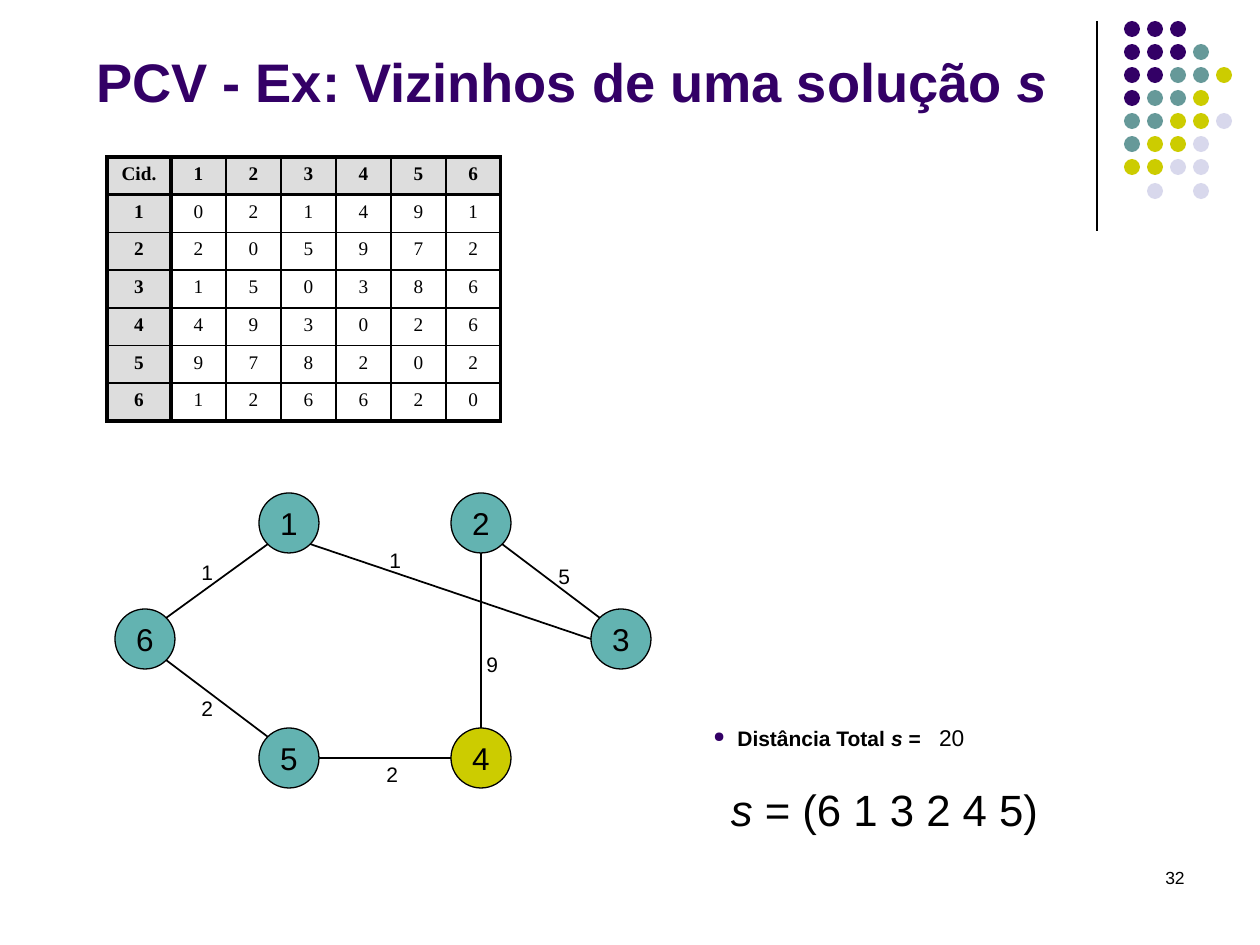
from lxml import etree
from pptx import Presentation
from pptx import util as u
from pptx.dml.color import RGBColor
from pptx.enum import shapes, text
from pptx.oxml import ns

BLACK, PLUM, TEAL, LIME = "000000", "330066", "63B3B1", "CCCC00"
ALIGN = {"l": text.PP_ALIGN.LEFT, "c": text.PP_ALIGN.CENTER, "r": text.PP_ALIGN.RIGHT}
HUES = {"p": PLUM, "t": "669999", "y": LIME, "g": "D8D8EC"}
DOTS = ["ppp", "pppt", "pptty", "ptty", "ttyyg", "tyyg", "yygg", " g g"]
COSTS = [[0, 2, 1, 4, 9, 1], [2, 0, 5, 9, 7, 2], [1, 5, 0, 3, 8, 6],
         [4, 9, 3, 0, 2, 6], [9, 7, 8, 2, 0, 2], [1, 2, 6, 6, 2, 0]]
NODES = {1: (289, 523), 2: (481, 523), 3: (621, 639),
         4: (481, 758), 5: (289, 758), 6: (145, 639)}
RADIUS, DIAG = 30, 21
EDGES = [(5, (-DIAG, -DIAG), 6, (DIAG, DIAG)),
         (6, (DIAG, -DIAG), 1, (-DIAG, DIAG)),
         (1, (DIAG, DIAG), 3, (-RADIUS, 0)),
         (3, (-DIAG, -DIAG), 2, (DIAG, DIAG)),
         (2, (0, RADIUS), 4, (0, -RADIUS)),
         (4, (-RADIUS, 0), 5, (RADIUS, 0))]
LABELS = [("2", 189, 689), ("1", 189, 553), ("5", 546, 557),
          ("1", 377, 541), ("9", 474, 645), ("2", 374, 755)]


def px(n):
    """Turn pixels into EMU."""
    return u.Emu(round(n * 914400 / 126))


def rgb(code):
    """Turn a hex string into a colour."""
    return RGBColor.from_string(code)


def write(para, runs, size, color=BLACK, font="Arial", bold=False, align="l"):
    """Add (words, italic) runs to a paragraph."""
    para.alignment = ALIGN[align]
    for words, slant in runs:
        run = para.add_run()
        run.text = words
        face = run.font
        face.name, face.size, face.bold, face.italic = font, u.Pt(size), bold, slant
        face.color.rgb = rgb(color)


def note(slide, box, runs, size, wrap=True, low=False, **style):
    """Add a text box and return its paragraph."""
    frame = slide.shapes.add_textbox(*map(px, box)).text_frame
    frame.word_wrap = wrap
    frame.vertical_anchor = text.MSO_ANCHOR.BOTTOM if low else text.MSO_ANCHOR.TOP
    write(frame.paragraphs[0], runs, size, **style)
    return frame.paragraphs[0]


def bullet(para, color, indent):
    """Give a paragraph a round bullet with a hanging indent."""
    props = para._p.get_or_add_pPr()
    props.set("marL", str(px(indent)))
    props.set("indent", str(-px(indent)))
    hue = etree.SubElement(props, ns.qn("a:buClr"))
    etree.SubElement(hue, ns.qn("a:srgbClr"), val=color)
    etree.SubElement(props, ns.qn("a:buSzPct"), val="70000")
    etree.SubElement(props, ns.qn("a:buChar"), char="●")


def disc(slide, x, y, size, fill):
    """Add a plain filled circle."""
    shape = slide.shapes.add_shape(shapes.MSO_SHAPE.OVAL, px(x), px(y), px(size), px(size))
    shape.shadow.inherit = False
    shape.fill.solid()
    shape.fill.fore_color.rgb = rgb(fill)
    shape.line.fill.background()
    return shape


def node(slide, name, x, y, fill):
    """Add a numbered city centred on a point."""
    shape = disc(slide, x - RADIUS, y - RADIUS, 2 * RADIUS, fill)
    shape.line.color.rgb = rgb(BLACK)
    shape.line.width = u.Pt(0.75)
    frame = shape.text_frame
    frame.word_wrap = False
    frame.vertical_anchor = text.MSO_ANCHOR.MIDDLE
    write(frame.paragraphs[0], [(str(name), False)], 18, align="c")


def link(slide, start, end, width=1):
    """Add a straight black line."""
    line = slide.shapes.add_connector(shapes.MSO_CONNECTOR.STRAIGHT, *map(px, start + end))
    line.line.color.rgb = rgb(BLACK)
    line.line.width = u.Pt(width)
    etree.SubElement(line._element.spPr, ns.qn("a:effectLst"))


def border(cell, sides):
    """Draw the four cell borders, given as side to width."""
    props = cell._tc.get_or_add_tcPr()
    for side, width in sides.items():
        line = etree.SubElement(props, ns.qn(f"a:ln{side}"), w=str(u.Pt(width)))
        fill = etree.SubElement(line, ns.qn("a:solidFill"))
        etree.SubElement(fill, ns.qn("a:srgbClr"), val=BLACK)


def grid(slide, x, y, rows):
    """Add the distance table with grey heads and a thick frame."""
    count = len(rows)
    widths, height = [64] + [55] * (count - 1), 264 / count
    table = slide.shapes.add_table(count, count, px(x), px(y), px(sum(widths)),
                                   px(height * count)).table
    table.first_row = table.horz_banding = False
    for col, width in zip(table.columns, widths):
        col.width = px(width)
    thick = {0, 1, count}
    for i, row in enumerate(rows):
        table.rows[i].height = px(height)
        for j, value in enumerate(row):
            cell = table.cell(i, j)
            edges = {"L": j, "R": j + 1, "T": i, "B": i + 1}
            border(cell, {k: 2.25 if n in thick else 1 for k, n in edges.items()})
            head = i == 0 or j == 0
            if head:
                cell.fill.solid()
                cell.fill.fore_color.rgb = rgb("DDDDDD")
            else:
                cell.fill.background()
            write(cell.text_frame.paragraphs[0], [(str(value), False)], 11,
                  font="Times New Roman", bold=head, align="c")


def decor(slide):
    """Add the corner rule and its dots."""
    link(slide, (1097, 21), (1097, 231), 0.75)
    for i, row in enumerate(DOTS):
        for j, key in enumerate(row):
            if key in HUES:
                disc(slide, 1124 + 23 * j, 21 + 162 * i // 7, 16, HUES[key])


def graph(slide):
    """Add the tour with its cities, edges and costs."""
    for name, (x, y) in NODES.items():
        node(slide, name, x, y, LIME if name == 4 else TEAL)
    for a, (ax, ay), b, (bx, by) in EDGES:
        link(slide, (NODES[a][0] + ax, NODES[a][1] + ay),
             (NODES[b][0] + bx, NODES[b][1] + by))
    for cost, x, y in LABELS:
        note(slide, (x, y, 36, 38), [(cost, False)], 12, wrap=False, align="c")


def main():
    """Build the slide and save it."""
    deck = Presentation()
    deck.slide_width, deck.slide_height = px(1260), px(945)
    slide = deck.slides.add_slide(deck.slide_layouts[6])
    decor(slide)
    note(slide, (903, 861, 294, 63), [("32", False)], 10, align="r")
    note(slide, (84, 32, 1008, 88),
         [("PCV - Ex: Vizinhos de uma solução ", False), ("s", True)], 31,
         low=True, color=PLUM, bold=True)
    names = list(range(1, len(COSTS) + 1))
    grid(slide, 107, 157, [["Cid."] + names] + [[n] + row for n, row in zip(names, COSTS)])
    graph(slide)
    total = note(slide, (701, 719, 281, 57),
                 [("Distância Total ", False), ("s ", True), ("=", False)], 12, bold=True)
    bullet(total, PLUM, 24)
    note(slide, (920, 718, 57, 40), [(" 20", False)], 13, wrap=False, align="c")
    note(slide, (669, 777, 431, 66), [("s", True), (" = (6 1 3 2 4 5)", False)], 25, align="c")
    deck.save("out.pptx")


if __name__ == "__main__":
    main()
